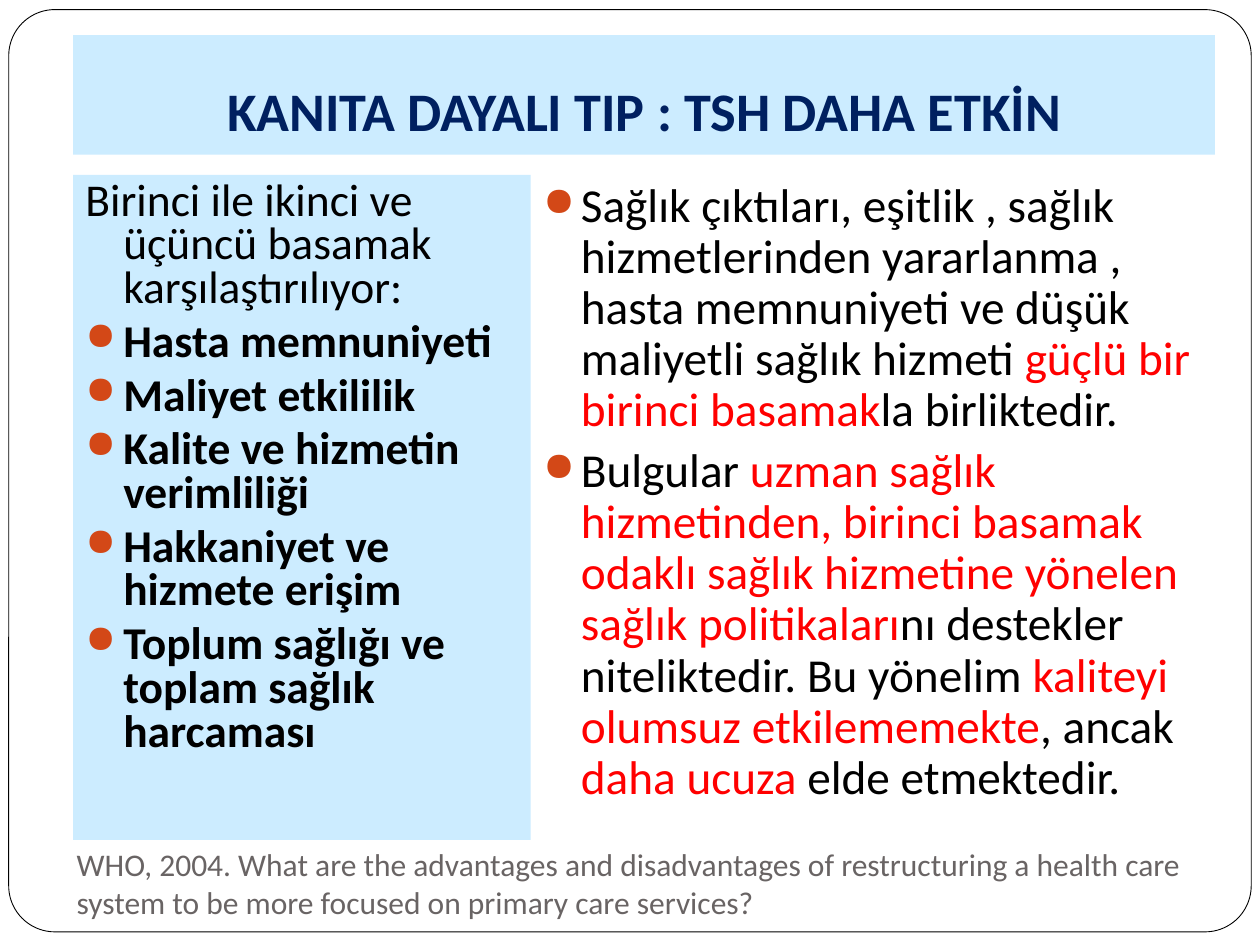
from dataclasses import dataclass

from lxml import etree
from pptx import Presentation
from pptx import util as u
from pptx.dml.color import RGBColor
from pptx.enum import shapes, text
from pptx.oxml.ns import qn


@dataclass(frozen=True)
class Theme:
    font: str = "Calibri"
    white: str = "FFFFFF"
    black: str = "000000"
    panel: str = "CCECFF"
    navy: str = "002060"
    red: str = "FF0000"
    bullet: str = "D34817"
    gray: str = "696464"
    title_size: float = 31
    list_size: float = 26
    body_size: float = 27
    source_size: float = 18


THEME = Theme()
INDENT = 21.6
MARGIN = 41.76
COLUMN_TOP, COLUMN_HEIGHT = 100, 380
LIST_WIDTH = 261.5

LIST_INTRO = "Birinci ile ikinci ve üçüncü basamak karşılaştırılıyor:"
CRITERIA = [
    "Hasta memnuniyeti",
    "Maliyet etkililik",
    "Kalite ve hizmetin verimliliği",
    "Hakkaniyet ve hizmete erişim",
    "Toplum sağlığı ve toplam sağlık harcaması",
]
# Runs alternate between plain and highlighted text.
FINDINGS = [
    ["Sağlık çıktıları, eşitlik , sağlık hizmetlerinden yararlanma , hasta "
     "memnuniyeti ve düşük maliyetli sağlık hizmeti ",
     "güçlü bir birinci basamak", "la birliktedir."],
    ["Bulgular ",
     "uzman sağlık hizmetinden, birinci basamak odaklı sağlık hizmetine "
     "yönelen sağlık politikaları",
     "nı destekler niteliktedir. Bu yönelim ",
     "kaliteyi olumsuz etkilememekte", ", ancak ",
     "daha ucuza ", "elde etmektedir."],
]
SOURCE = ("WHO, 2004. What are the advantages and disadvantages of restructuring "
          "a health care system to be more focused on primary care services?")


def add_run(paragraph, content, *, size, color=THEME.black, bold=False):
    run = paragraph.add_run()
    run.text = content
    run.font.name = THEME.font
    run.font.size = u.Pt(size)
    run.font.bold = bold
    run.font.color.rgb = RGBColor.from_string(color)


def format_list_item(paragraph, line_spacing, bulleted=True):
    """Set spacing and a hanging indent, with an optional coloured bullet."""
    paragraph.line_spacing = line_spacing
    paragraph.space_before = u.Pt(5.8)
    properties = paragraph._p.get_or_add_pPr()
    properties.set("marL", str(u.Pt(INDENT)))
    properties.set("indent", str(-u.Pt(INDENT)))
    if bulleted:
        color = etree.SubElement(properties, qn("a:buClr"))
        etree.SubElement(color, qn("a:srgbClr"), val=THEME.bullet)
        etree.SubElement(properties, qn("a:buSzPct"), val="85000")
        etree.SubElement(properties, qn("a:buChar"), char="●")


class SlideBuilder:
    def __init__(self, presentation, theme):
        self.theme = theme
        self.slide = presentation.slides.add_slide(presentation.slide_layouts[5])

    def fill(self, shape, color):
        shape.fill.solid()
        shape.fill.fore_color.rgb = RGBColor.from_string(color)

    def frame(self, left, top, width, height):
        """Draw the rounded border behind everything else."""
        shape = self.slide.shapes.add_shape(
            shapes.MSO_SHAPE.ROUNDED_RECTANGLE, *map(u.Pt, (left, top, width, height)))
        shape.adjustments[0] = 0.05
        shape.shadow.inherit = False
        self.fill(shape, self.theme.white)
        shape.line.color.rgb = RGBColor.from_string(self.theme.black)
        shape.line.width = u.Pt(0.5)
        self.slide.shapes._spTree.insert(2, shape._element)

    def title(self, content, left, top, width, height):
        title = self.slide.shapes.title
        title.left, title.top, title.width, title.height = map(
            u.Pt, (left, top, width, height))
        self.fill(title, self.theme.panel)
        frame = title.text_frame
        frame.auto_size = text.MSO_AUTO_SIZE.NONE
        frame.vertical_anchor = text.MSO_ANCHOR.BOTTOM
        frame.margin_bottom = u.Pt(7.2)
        paragraph = frame.paragraphs[0]
        paragraph.alignment = text.PP_ALIGN.CENTER
        add_run(paragraph, content, size=self.theme.title_size,
                color=self.theme.navy, bold=True)

    def text_box(self, left, top, width, height, paragraph_count=1, fill=None):
        """Add a wrapping text box and return its empty paragraphs."""
        box = self.slide.shapes.add_textbox(*map(u.Pt, (left, top, width, height)))
        if fill:
            self.fill(box, fill)
        frame = box.text_frame
        frame.word_wrap = True
        for _ in range(paragraph_count - 1):
            frame.add_paragraph()
        return frame.paragraphs

    def criteria(self, intro, items, *bounds):
        paragraphs = self.text_box(*bounds, len(items) + 1, self.theme.panel)
        for index, (paragraph, content) in enumerate(zip(paragraphs, [intro, *items])):
            format_list_item(paragraph, 0.8, bulleted=index > 0)
            add_run(paragraph, content, size=self.theme.list_size, bold=index > 0)

    def findings(self, items, *bounds):
        colors = self.theme.black, self.theme.red
        for paragraph, runs in zip(self.text_box(*bounds, len(items)), items):
            format_list_item(paragraph, 0.9)
            for index, content in enumerate(runs):
                add_run(paragraph, content, size=self.theme.body_size,
                        color=colors[index % 2])

    def source(self, content, *bounds):
        paragraph, = self.text_box(*bounds)
        add_run(paragraph, content, size=self.theme.source_size,
                color=self.theme.gray)


def main():
    presentation = Presentation()
    presentation.slide_width, presentation.slide_height = u.Pt(720), u.Pt(540)
    builder = SlideBuilder(presentation, THEME)
    builder.frame(5, 5.5, 710, 527)
    builder.title("KANITA DAYALI TIP : TSH DAHA ETKİN", MARGIN, 20, 652.5, 68.4)
    builder.criteria(LIST_INTRO, CRITERIA,
                     MARGIN, COLUMN_TOP, LIST_WIDTH, COLUMN_HEIGHT)
    builder.findings(FINDINGS, MARGIN + LIST_WIDTH, COLUMN_TOP, 402.5, COLUMN_HEIGHT)
    builder.source(SOURCE, 36.75, 479.5, 657.5, 51)
    presentation.save("out.pptx")


if __name__ == "__main__":
    main()
